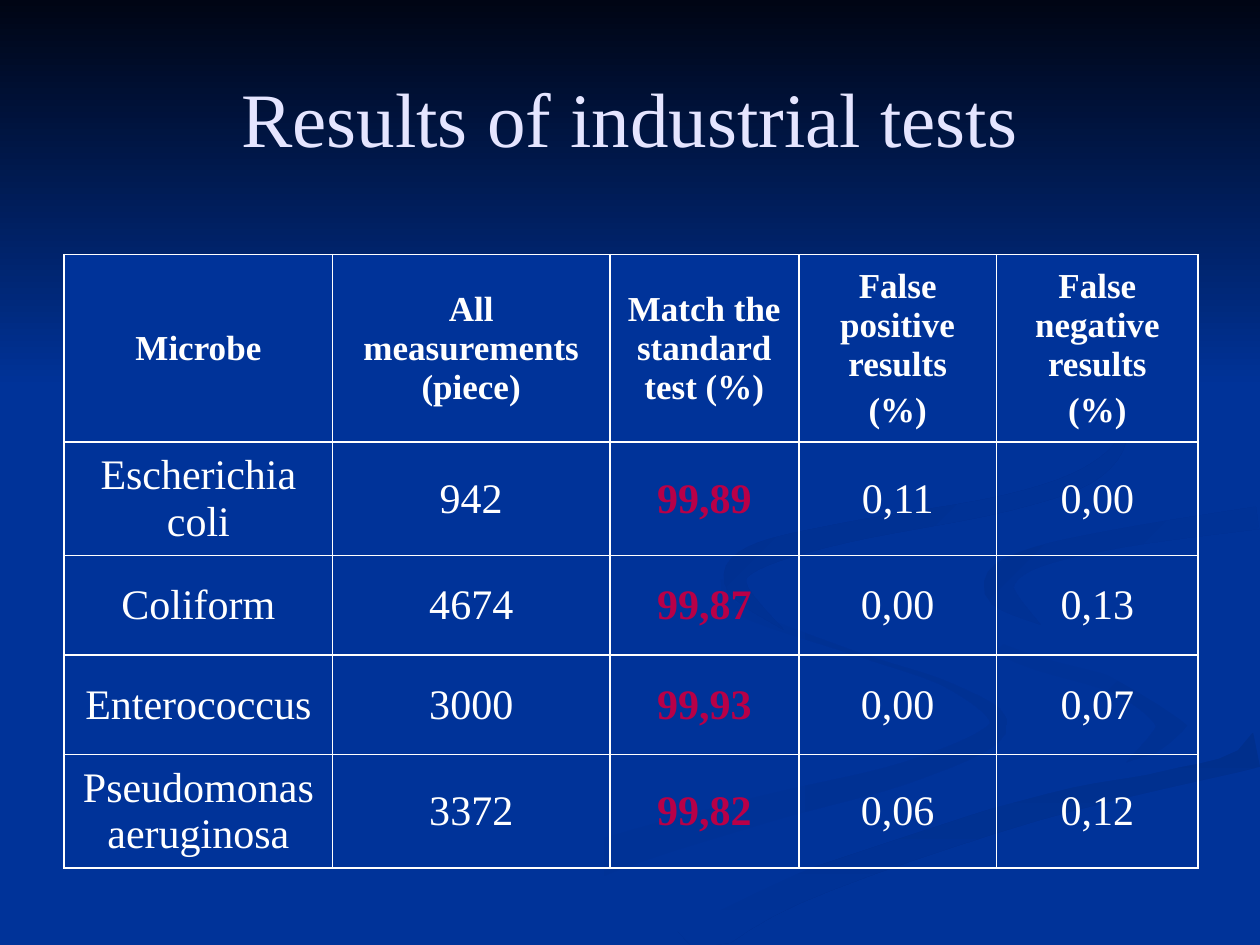
import math

from lxml import etree
from pptx import Presentation
from pptx import util as u
from pptx.dml.color import RGBColor
from pptx.enum import shapes, text
from pptx.oxml.ns import qn

FONT = "Times New Roman"
BLUE = "003399"
WHITE = "FFFFFF"
WIDTH, HEIGHT = 10, 7.5
STEPS = 6


def color(value):
    return RGBColor.from_string(value)


def ribbon_outline(spine):
    padded = [spine[0], *spine, spine[-1]]
    samples = []
    for before, start, end, after in zip(padded, padded[1:], padded[2:], padded[3:]):
        for step in range(STEPS):
            t = step / STEPS
            samples.append([
                b + t * (c - a) / 2 + t**2 * (2 * a - 5 * b + 4 * c - d) / 2
                + t**3 * (3 * b - a - 3 * c + d) / 2
                for a, b, c, d in zip(before, start, end, after)])
    samples.append(spine[-1])
    left_edge, right_edge = [], []
    for index, (x, y, thickness) in enumerate(samples):
        previous = samples[max(index - 1, 0)]
        following = samples[min(index + 1, len(samples) - 1)]
        direction = math.atan2(following[1] - previous[1], following[0] - previous[0])
        across = max(thickness, 0) / 2 * math.sin(direction)
        along = max(thickness, 0) / 2 * math.cos(direction)
        left_edge.append((min(x + across, WIDTH), min(y - along, HEIGHT)))
        right_edge.append((min(x - across, WIDTH), min(y + along, HEIGHT)))
    return left_edge + right_edge[::-1]


presentation = Presentation()
presentation.slide_width = u.Inches(WIDTH)
presentation.slide_height = u.Inches(HEIGHT)
slide = presentation.slides.add_slide(presentation.slide_layouts[6])
slide.background.fill.solid()
slide.background.fill.fore_color.rgb = color(BLUE)

# Each spine node is x, y and ribbon thickness in inches.
lower_left_ribbon = [
    (5.73, 4.6, 0.02), (5.88, 4.85, 0.07), (6.8, 5.19, 0.03), (7.55, 5.45, 0.05),
    (7.92, 5.78, 0.15), (7.2, 6.13, 0.17), (6, 6.44, 0.22), (4.6, 6.87, 0.3), (3.3, 7.49, 0.5)]
right_curl = [
    (7.24, 4.64, 0), (7.38, 4.86, 0.06), (8.1, 5.22, 0.1), (8.9, 5.46, 0.13),
    (9.3, 5.75, 0.25), (8.94, 6.05, 0)]
bottom_band = [(5.37, 7.49, 0.5), (6.3, 7.06, 0.24), (8.2, 6.42, 0.2), (9.98, 5.95, 0.28)]
center_ribbon = [
    (9.99, 3.95, 0.15), (8.7, 4.16, 0.14), (7.9, 4.33, 0.2), (7.53, 4.63, 0.55),
    (7.97, 4.97, 0.25), (8.7, 5.2, 0.2), (9.7, 5.65, 0.55), (9.2, 6.05, 0.15),
    (8.3, 6.25, 0.1), (6.6, 6.75, 0.13), (4.9, 7.49, 0.26)]
upper_right_band = [
    (9.98, 4.11, 0.18), (8.9, 4.27, 0.15), (8.15, 4.45, 0.17), (7.93, 4.68, 0.24), (8.26, 4.96, 0)]
upper_curl = [
    (7.62, 2.33, 0), (8.5, 2.83, 0.08), (8.91, 3.35, 0.05), (8.7, 3.73, 0.13), (8, 3.99, 0.13),
    (6.7, 4.23, 0.16), (5.98, 4.43, 0.2), (5.85, 4.66, 0.16), (6.22, 5, 0)]

swirls = [
    (lower_left_ribbon, BLUE, "003193", 0),
    (right_curl, BLUE, "003193", 45),
    (bottom_band, "002F8C", BLUE, 90),
    (center_ribbon, BLUE, BLUE, 0),
    (upper_right_band, "003091", BLUE, 45),
    (upper_curl, "002F8E", BLUE, 45),
]
backdrop = []
for spine, start, end, angle in swirls:
    outline = [(u.Inches(x), u.Inches(y)) for x, y in ribbon_outline(spine)]
    builder = slide.shapes.build_freeform(*outline[0])
    builder.add_line_segments(outline[1:], close=True)
    backdrop.append((builder.convert_to_shape(), start, end, angle))

sky = slide.shapes.add_shape(
    shapes.MSO_SHAPE.RECTANGLE, 0, 0, u.Inches(WIDTH), u.Inches(3.08))
backdrop.append((sky, "000514", BLUE, 90))

for shape, start, end, angle in backdrop:
    shape.shadow.inherit = False
    shape.line.fill.background()
    shape.fill.gradient()
    shape.fill.gradient_angle = (360 - angle) % 360
    for stop, value in zip(shape.fill.gradient_stops, (start, end)):
        stop.color.rgb = color(value)

title = slide.shapes.add_textbox(u.Inches(0.5), u.Inches(0.3), u.Inches(9), u.Inches(1.25))
title.text_frame.word_wrap = True
title.text_frame.vertical_anchor = text.MSO_ANCHOR.MIDDLE
paragraph = title.text_frame.paragraphs[0]
paragraph.text = "Results of industrial tests"
paragraph.alignment = text.PP_ALIGN.CENTER
paragraph.font.name = FONT
paragraph.font.size = u.Pt(44)
paragraph.font.color.rgb = color("E5E5FF")

rows = [
    ["Microbe", "All measurements (piece)", "Match the standard test (%)",
     "False positive results\n(%)", "False negative results\n(%)"],
    ["Escherichia coli", "942", "99,89", "0,11", "0,00"],
    ["Coliform", "4674", "99,87", "0,00", "0,13"],
    ["Enterococcus", "3000", "99,93", "0,00", "0,07"],
    ["Pseudomonas aeruginosa", "3372", "99,82", "0,06", "0,12"],
]
column_widths = [2.13, 2.2, 1.5, 1.57, 1.6]
row_heights = [1.38, 0.87, 0.79, 0.79, 0.82]
match_column = 2

table = slide.shapes.add_table(
    len(rows), len(column_widths), u.Inches(0.51), u.Inches(2.02),
    u.Inches(sum(column_widths)), u.Inches(sum(row_heights))).table
table.first_row = False
table.horz_banding = False
for column, width in zip(table.columns, column_widths):
    column.width = u.Inches(width)

for row_index, (row, height) in enumerate(zip(rows, row_heights)):
    table.rows[row_index].height = u.Inches(height)
    header = row_index == 0
    size = 20 if header else 24
    for column_index, value in enumerate(row):
        cell = table.cell(row_index, column_index)
        cell.text = value
        cell.vertical_anchor = text.MSO_ANCHOR.MIDDLE
        if header:
            cell.fill.solid()
            cell.fill.fore_color.rgb = color(BLUE)
        else:
            cell.fill.background()
        match = column_index == match_column and not header
        for line_index, paragraph in enumerate(cell.text_frame.paragraphs):
            paragraph.alignment = text.PP_ALIGN.CENTER
            paragraph.space_before = u.Pt(4 if line_index else 0)
            paragraph.font.name = FONT
            paragraph.font.size = u.Pt(size)
            paragraph.font.bold = header or match
            paragraph.font.color.rgb = color("B80047" if match else WHITE)
        properties = cell._tc.get_or_add_tcPr()
        for position, side in enumerate(("lnL", "lnR", "lnT", "lnB")):
            border = etree.Element(qn("a:" + side), w=str(u.Pt(1)))
            fill = etree.SubElement(border, qn("a:solidFill"))
            etree.SubElement(fill, qn("a:srgbClr"), val=WHITE)
            properties.insert(position, border)

presentation.save("out.pptx")
